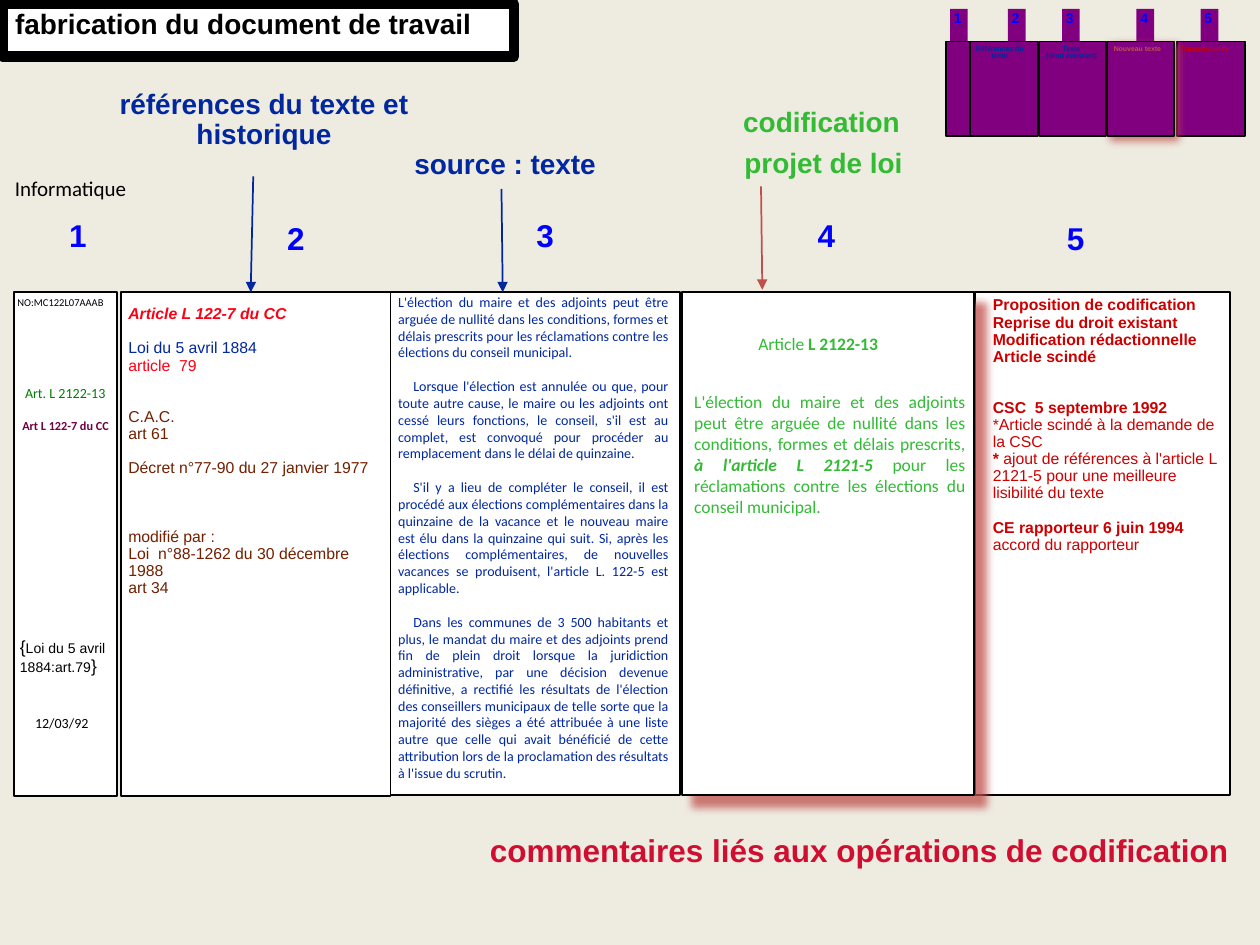
"""Build the slide that shows how the working document is made."""
from lxml import etree
from pptx import Presentation
from pptx import util as u
from pptx.dml.color import RGBColor
from pptx.enum import shapes, text
from pptx.oxml.ns import qn

PX = u.Inches(1) // 100
LINE = 9.8
HUE = {
    "sand": "EEECE1", "white": "FFFFFF", "black": "000000", "purple": "800080",
    "blue": "0000FF", "navy": "00279F", "green": "33BB36", "moss": "037C03",
    "brick": "C0504D", "red": "CC0000", "rose": "CF0E30", "flame": "FC0116",
    "brown": "712000", "plum": "6E0043",
}
ALIGN = {"l": text.PP_ALIGN.LEFT, "c": text.PP_ALIGN.CENTER,
         "r": text.PP_ALIGN.RIGHT, "j": text.PP_ALIGN.JUSTIFY}


def say(words, **fmt):
    return words, fmt


def tint(name):
    return RGBColor.from_string(HUE[name])


class Deck:
    def __init__(self):
        self.prs = Presentation()
        self.prs.slide_width, self.prs.slide_height = 1000 * PX, 750 * PX
        self.slide = self.prs.slides.add_slide(self.prs.slide_layouts[1])
        self.pool = self.slide.shapes
        fill = self.slide.background.fill
        fill.solid()
        fill.fore_color.rgb = tint("sand")
        self.base = dict(font="Arial", size=9, hue="black", bold=False,
                         ital=False, align="l", lead=0.9, gap=0, dent=0)

    def typeset(self, shape, paras, pad=(10, 5), wrap=True, **fmt):
        frame = shape.text_frame
        frame.auto_size = text.MSO_AUTO_SIZE.NONE
        frame.word_wrap = wrap
        frame.vertical_anchor = text.MSO_ANCHOR.TOP
        frame.margin_left = frame.margin_right = pad[0] * PX
        frame.margin_top = frame.margin_bottom = pad[1] * PX
        for i, runs in enumerate(paras):
            para = frame.add_paragraph() if i else frame.paragraphs[0]
            runs = runs if isinstance(runs, list) else [runs]
            runs = [r if isinstance(r, tuple) else say(r) for r in runs]
            look = {**self.base, **fmt, **runs[0][1]}
            para.alignment = ALIGN[look["align"]]
            para.line_spacing = look["lead"]
            para.space_before = u.Pt(look["gap"] * LINE)
            prop = para._p.get_or_add_pPr()
            prop.set("marL", "0")
            prop.set("indent", str(look["dent"] * PX))
            etree.SubElement(prop, qn("a:buNone"))
            for words, own in runs:
                look = {**self.base, **fmt, **own}
                run = para.add_run()
                run.text = words
                font = run.font
                font.name, font.size = look["font"], u.Pt(look["size"])
                font.bold, font.italic = look["bold"], look["ital"]
                font.color.rgb = tint(look["hue"])

    def label(self, x, y, w, h, *paras, **fmt):
        box = self.pool.add_textbox(x * PX, y * PX, w * PX, h * PX)
        self.typeset(box, paras, **fmt)

    def holder(self, idx, x, y, w, h, *paras, **fmt):
        box = self.slide.placeholders[idx]
        box.left, box.top, box.width, box.height = x * PX, y * PX, w * PX, h * PX
        self.pool._spTree.append(box._element)
        self.typeset(box, paras, **fmt)
        return box

    def paint(self, shape, fill, line=0):
        shape.fill.solid()
        shape.fill.fore_color.rgb = tint(fill)
        if line:
            shape.line.color.rgb = tint("black")
            shape.line.width = u.Pt(line)
        else:
            shape.line.fill.background()

    def panel(self, x, y, w, h, fill, line=1, glow=0):
        box = self.pool.add_shape(shapes.MSO_SHAPE.RECTANGLE,
                                  x * PX, y * PX, w * PX, h * PX)
        box.shadow.inherit = False
        self.paint(box, fill, line)
        if glow:
            group = box._element.spPr.find(qn("a:effectLst"))
            cast = etree.SubElement(
                group, qn("a:outerShdw"), blurRad=str(u.Pt(5)),
                dist=str(u.Pt(glow)), dir="2700000", algn="tl", rotWithShape="0")
            shade = etree.SubElement(cast, qn("a:srgbClr"), val=HUE["brick"])
            etree.SubElement(shade, qn("a:alpha"), val="75000")
        return box

    def arrow(self, x1, y1, x2, y2, hue):
        line = self.pool.add_connector(shapes.MSO_CONNECTOR.STRAIGHT,
                                       x1 * PX, y1 * PX, x2 * PX, y2 * PX)
        line.line.color.rgb = tint(hue)
        line.line.width = u.Pt(1)
        prop = line._element.spPr
        etree.SubElement(prop.find(qn("a:ln")), qn("a:tailEnd"), type="triangle")
        etree.SubElement(prop, qn("a:effectLst"))


def mini(deck):
    tiny = dict(pad=(3, 2), wrap=False, bold=True)
    for num, x in (5, 953), (4, 902), (3, 843), (2, 800), (1, 754):
        tab = deck.panel(x, 7, 14, 28, "purple", 0)
        deck.typeset(tab, [str(num)], size=8, hue="blue", **tiny)
    for x, w, glow in ((934, 54, 0), (751, 19, 0), (825, 53, 0),
                       (770, 54, 0), (879, 53, 3)):
        deck.panel(x, 33, w, 75, "purple", glow=glow)
    for x, w, hue, align, rows in (
            (826, 49, "navy", "c", ["Texte", "(droit constant)"]),
            (770, 47, "navy", "c", ["Références du", "texte"]),
            (881, 47, "brick", "l", ["Nouveau texte"]),
            (934, 47, "red", "l", ["Commentaires"])):
        deck.label(x, 34, w, 16, *rows, size=4, hue=hue, align=align, **tiny)


def heads(deck):
    big = dict(size=16, bold=True, wrap=False)
    deck.label(580, 81, 145, 34, "codification", hue="green", **big)
    deck.label(581, 114, 146, 34, "projet de loi", hue="green", **big)
    deck.label(84, 67, 251, 59, "références du texte et", "historique",
               hue="navy", align="c", **big)
    deck.label(319, 114, 166, 35, "source : texte", hue="navy", **big)
    deck.label(2, 134, 109, 31, "Informatique", font="Calibri", size=12,
               lead=1, wrap=False)
    for num, x, y in (1, 45, 170), (2, 218, 172), (3, 416, 170), (4, 639, 170), (5, 837, 172):
        deck.label(x, y, 40, 83, str(num), size=18, bold=True, hue="blue", wrap=False)
    deck.arrow(604, 148, 605, 230, "brick")
    deck.arrow(201, 140, 199, 232, "navy")
    deck.arrow(398, 150, 399, 232, "navy")


def columns(deck):
    for x, w, h, glow in ((774, 202, 399, 0), (541, 232, 399, 8.5),
                          (310, 230, 399, 0), (96, 214, 400, 0), (11, 82, 400, 0)):
        deck.panel(x, 232, w, h, "white", glow=glow)
    deck.holder(
        1, 778, 231, 202, 237,
        *[say(t, bold=True) for t in (
            "Proposition de codification", "Reprise du droit existant",
            "Modification rédactionnelle", "Article scindé")],
        say("CSC  5 septembre 1992", bold=True, gap=2),
        "*Article scindé à la demande de la CSC",
        [say("*", bold=True),
         " ajout de références à l'article L 2121-5 pour une meilleure lisibilité du texte"],
        say("CE rapporteur 6 juin 1994", bold=True, gap=1),
        "accord du rapporteur", hue="red")
    cal = dict(font="Calibri", lead=1)
    deck.label(
        543, 306, 231, 135,
        ["L'élection du maire et des adjoints peut être arguée de nullité dans les conditions, formes et délais prescrits, ",
         say("à l'article L 2121-5 ", bold=True, ital=True),
         "pour les réclamations contre les élections du conseil municipal."],
        size=10, hue="green", align="j", pad=(8, 4), **cal)
    deck.label(592, 259, 121, 26, ["Article ", say("L 2122-13", bold=True)],
               size=10, hue="green", wrap=False, **cal)
    deck.label(
        308, 229, 231, 410,
        "L'élection du maire et des adjoints peut être arguée de nullité dans les conditions, formes et délais prescrits pour les réclamations contre les élections du conseil municipal.",
        *[say(t, gap=1, dent=12) for t in (
            "Lorsque l'élection est annulée ou que, pour toute autre cause, le maire ou les adjoints ont cessé leurs fonctions, le conseil, s'il est au complet, est convoqué pour procéder au remplacement dans le délai de quinzaine.",
            "S'il y a lieu de compléter le conseil, il est procédé aux élections complémentaires dans la quinzaine de la vacance et le nouveau maire est élu dans la quinzaine qui suit. Si, après les élections complémentaires, de nouvelles vacances se produisent, l'article L. 122-5 est applicable.",
            "Dans les communes de 3 500 habitants et plus, le mandat du maire et des adjoints prend fin de plein droit lorsque la juridiction administrative, par une décision devenue définitive, a rectifié les résultats de l'élection des conseillers municipaux de telle sorte que la majorité des sièges a été attribuée à une liste autre que celle qui avait bénéficié de cette attribution lors de la proclamation des résultats à l'issue du scrutin.")],
        size=8, hue="navy", align="j", pad=(8, 4), **cal)
    deck.label(
        92, 238, 220, 252,
        say("Article L 122-7 du CC", hue="flame", bold=True, ital=True),
        say("Loi du 5 avril 1884", hue="navy", gap=1),
        say("article  79", hue="flame"), say("C.A.C.", gap=2), "art 61",
        say("Décret n°77-90 du 27 janvier 1977", gap=1),
        say("modifié par :", gap=3),
        "Loi  n°88-1262 du 30 décembre 1988", "art 34", hue="brown")
    deck.label(10, 300, 91, 24, "Art. L 2122-13", size=8, hue="moss", **cal)
    deck.label(2, 328, 100, 22, "Art L 122-7 du CC", font="Calibri", size=7,
               hue="plum", bold=True, align="c")
    deck.label(6, 502, 102, 41, [say("{", size=10), "Loi du 5 avril 1884:art.79",
                                 say("}", size=10)], size=8)
    deck.label(18, 562, 70, 24, "12/03/92", size=8, **cal)
    deck.label(4, 230, 107, 21, "NO:MC122L07AAAB", size=6, **cal)


def main():
    deck = Deck()
    mini(deck)
    deck.label(349, 658, 636, 83, "commentaires liés aux opérations de codification",
               size=18, hue="rose", bold=True, align="r")
    title = deck.holder(0, 2, 3, 406, 42, "fabrication du document de travail",
                        size=16, bold=True)
    deck.paint(title, "white", 6)
    columns(deck)
    heads(deck)
    deck.prs.save("out.pptx")


if __name__ == "__main__":
    main()
